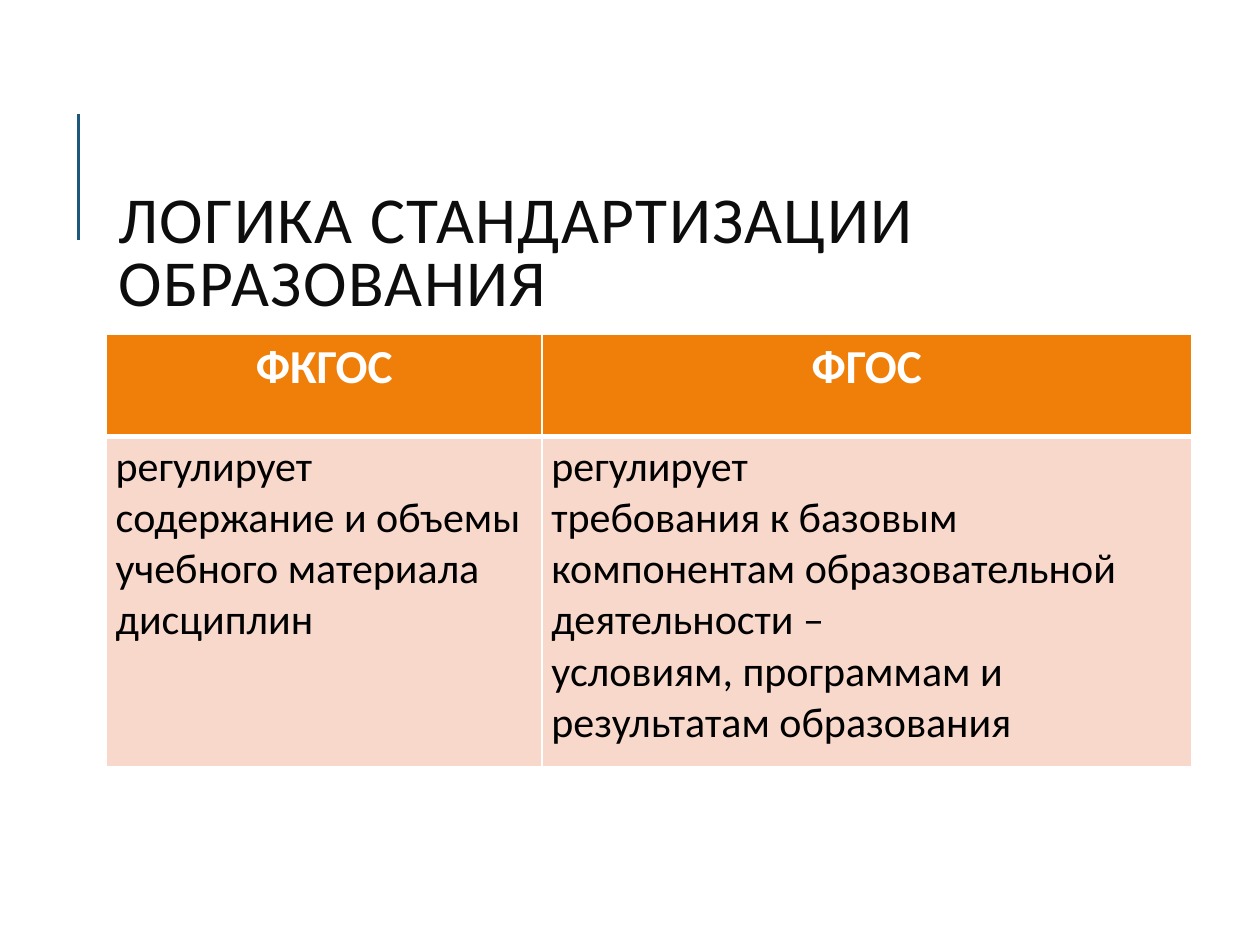
from lxml.etree import SubElement
from pptx import Presentation
from pptx.dml.color import RGBColor
from pptx.enum.shapes import MSO_CONNECTOR
from pptx.enum.text import MSO_ANCHOR, MSO_AUTO_SIZE, PP_ALIGN
from pptx.oxml.ns import qn
from pptx.util import Pt

COLORS = {
    "accent": "1B587C",
    "title": "0D0D0D",
    "header": "F07F09",
    "body": "F9D8CC",
    "white": "FFFFFF",
    "black": "000000",
}
HEADINGS = ["ФКГОС", "ФГОС"]
DESCRIPTIONS = [
    "регулирует\nсодержание и объемы учебного материала дисциплин",
    "регулирует\nтребования к базовым компонентам образовательной деятельности –\n"
    "условиям, программам и результатам образования",
]


class SlideBuilder:
    font_name = "Calibri"

    def __init__(self, slide):
        self.slide = slide

    def color(self, key):
        return RGBColor.from_string(COLORS[key])

    def style(self, paragraph, size, color, bold=False):
        font = paragraph.font
        font.name, font.size, font.bold = self.font_name, Pt(size), bold
        font.color.rgb = self.color(color)

    def title(self, text, left, top, width, height):
        title = self.slide.shapes.title
        title.left, title.top = Pt(left), Pt(top)
        title.width, title.height = Pt(width), Pt(height)
        frame = title.text_frame
        frame.text = text
        frame.word_wrap = True
        frame.auto_size = MSO_AUTO_SIZE.NONE
        frame.vertical_anchor = MSO_ANCHOR.MIDDLE
        heading = frame.paragraphs[0]
        heading.alignment = PP_ALIGN.LEFT
        heading.line_spacing = 0.8
        self.style(heading, 37.5, "title")
        heading.runs[0].font._element.set("spc", "80")

    def line(self, x1, y1, x2, y2, color, width):
        line = self.slide.shapes.add_connector(
            MSO_CONNECTOR.STRAIGHT, Pt(x1), Pt(y1), Pt(x2), Pt(y2))
        line.line.color.rgb = self.color(color)
        line.line.width = Pt(width)
        SubElement(line._element.spPr, qn("a:effectLst"))

    def borders(self, cell, widths):
        """Draw white borders, widths given as left, right, top, bottom."""
        properties = cell._tc.get_or_add_tcPr()
        for side, width in zip("LRTB", widths):
            border = SubElement(properties, qn(f"a:ln{side}"), w=str(Pt(width)))
            fill = SubElement(border, qn("a:solidFill"))
            SubElement(fill, qn("a:srgbClr"), val=COLORS["white"])

    def cell(self, cell, text, size, color, fill, border_widths, bold, align):
        self.borders(cell, border_widths)
        cell.fill.solid()
        cell.fill.fore_color.rgb = self.color(fill)
        cell.margin_left = cell.margin_right = Pt(5.3)
        cell.margin_top = cell.margin_bottom = Pt(2.7)
        cell.text = text
        for paragraph in cell.text_frame.paragraphs:
            paragraph.alignment = align
            self.style(paragraph, size, color, bold)

    def table(self, left, top, column_widths, row_heights):
        table = self.slide.shapes.add_table(
            len(row_heights), len(column_widths), Pt(left), Pt(top),
            Pt(sum(column_widths)), Pt(sum(row_heights))).table
        for column, width in zip(table.columns, column_widths):
            column.width = Pt(width)
        for row, height in zip(table.rows, row_heights):
            row.height = Pt(height)
        for column, (heading, description) in enumerate(zip(HEADINGS, DESCRIPTIONS)):
            self.cell(table.cell(0, column), heading, 27, "white", "header",
                      (1, 1, 1, 3), True, PP_ALIGN.CENTER)
            self.cell(table.cell(1, column), description, 24, "black", "body",
                      (1, 1, 3, 1), False, PP_ALIGN.LEFT)


def main():
    presentation = Presentation()
    presentation.slide_width, presentation.slide_height = Pt(720), Pt(540)
    title_only = presentation.slide_layouts[5]
    builder = SlideBuilder(presentation.slides.add_slide(title_only))
    builder.line(45, 137, 45, 65, "accent", 1.5)
    builder.table(60.8, 190.8, [249, 371], [58.7, 188.5])
    builder.title("ЛОГИКА СТАНДАРТИЗАЦИИ ОБРАЗОВАНИЯ", 60.5, 102.2, 617.8, 88.6)
    presentation.save("out.pptx")


if __name__ == "__main__":
    main()
